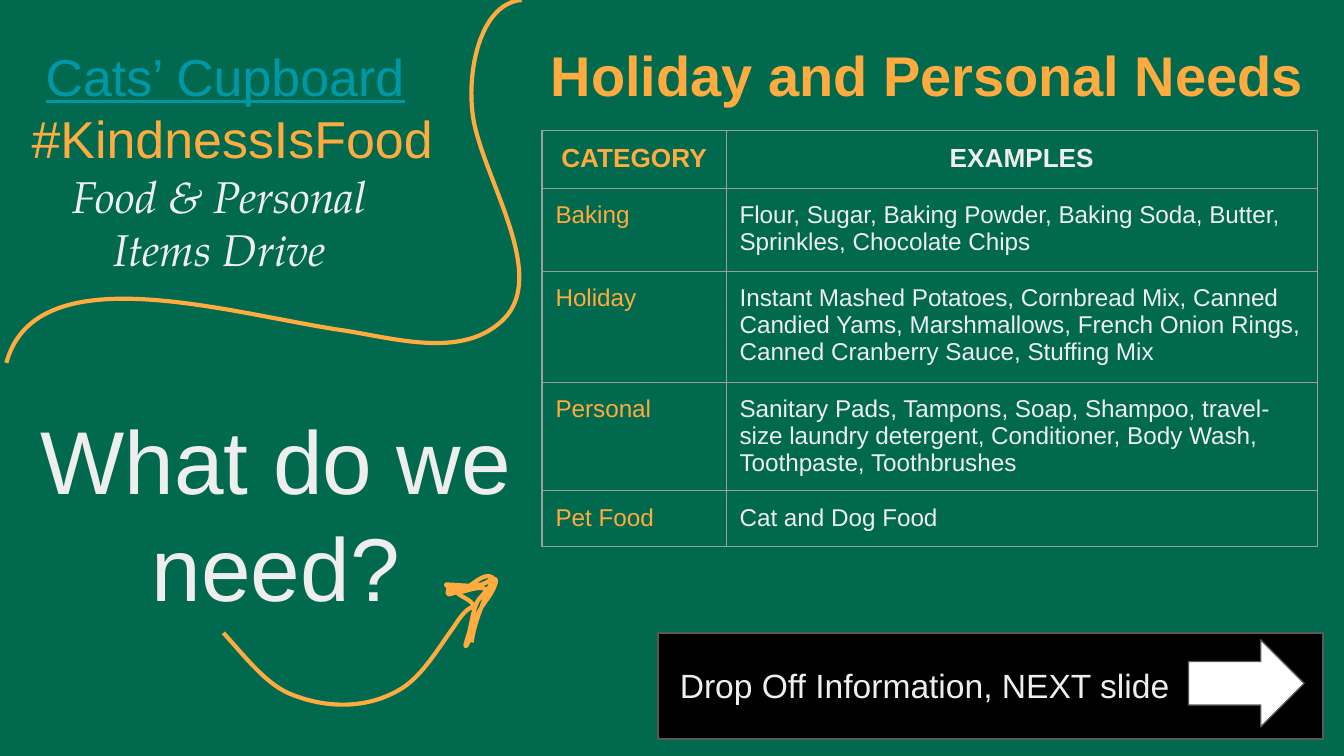
from typing import NamedTuple

import pptx
import pptx.util
import pptx.dml.color
import pptx.enum.shapes
import pptx.enum.text
import pptx.oxml
import pptx.oxml.ns
import lxml.etree

Pt = pptx.util.Pt
RGBColor = pptx.dml.color.RGBColor
Kind = pptx.enum.shapes.MSO_SHAPE
Align = pptx.enum.text.PP_ALIGN
Anchor = pptx.enum.text.MSO_ANCHOR
qn = pptx.oxml.ns.qn

GREEN = RGBColor(0x00, 0x69, 0x4E)
GOLD = RGBColor(0xFF, 0xAB, 0x40)
PALE = RGBColor(0xEE, 0xEE, 0xEE)
TEAL = RGBColor(0x00, 0x97, 0xA7)
BLACK = RGBColor(0, 0, 0)
WHITE = RGBColor(0xFF, 0xFF, 0xFF)
GRAY = RGBColor(0x59, 0x59, 0x59)
RULE = RGBColor(0x9E, 0x9E, 0x9E)
INSET = Pt(7.2)


class Box(NamedTuple):
    left: float
    top: float
    width: float
    height: float


class Line(NamedTuple):
    text: str
    size: float
    color: RGBColor
    font: str = "Arial"
    bold: bool = False
    slant: bool = False
    under: bool = False
    align: Align = Align.CENTER


class Row(NamedTuple):
    height: float
    kind: str
    items: str


class Curve(NamedTuple):
    box: Box
    start: tuple
    bends: list  # each: two control points and an end point


# Content
TITLE = [
    Line("Cats’ Cupboard", 27.8, TEAL, under=True),
    Line(" #KindnessIsFood", 27.8, GOLD),
    Line("Food & Personal ", 23.8, PALE, "TeX Gyre Pagella", slant=True),
    Line("Items Drive ", 23.8, PALE, "TeX Gyre Pagella", slant=True),
]
ASK = [Line("What do we need?", 47.8, PALE)]
HEAD = [Line("Holiday and Personal Needs", 30, GOLD, bold=True, align=Align.LEFT)]
NEXT = [Line("Drop Off Information, NEXT slide", 18, PALE, align=Align.LEFT)]

ROWS = [
    Row(31.1, "CATEGORY", "EXAMPLES"),
    Row(44.5, "Baking", "Flour, Sugar, Baking Powder, Baking Soda, Butter, "
        "Sprinkles, Chocolate Chips"),
    Row(59.5, "Holiday", "Instant Mashed Potatoes, Cornbread Mix, Canned Candied "
        "Yams, Marshmallows, French Onion Rings, Canned Cranberry Sauce, Stuffing Mix"),
    Row(58, "Personal", "Sanitary Pads, Tampons, Soap, Shampoo, travel-size laundry "
        "detergent, Conditioner, Body Wash, Toothpaste, Toothbrushes"),
    Row(30, "Pet Food", "Cat and Dog Food"),
]

SWIRL = Curve(Box(3.4, 0, 276, 194.4), (279.4, 0), [
    (254.9, 2.2, 248.4, 46.1, 254.9, 69.8),
    (263.5, 103.7, 294.5, 151.9, 267.1, 173.5),
    (245.5, 191.5, 211.7, 181.4, 184.3, 177.1),
    (124.6, 168.5, 19.4, 135.4, 3.4, 194.4),
])
ARROW = Curve(Box(119.7, 308.9, 146.1, 69.1), (119.7, 339.1), [
    (131, 351.4, 141.8, 365.8, 154.8, 371.5),
    (173.5, 379.4, 195.1, 380.2, 213.1, 370.1),
    (225.4, 363.6, 234, 348.5, 243.4, 335.5),
    (246.2, 331.2, 249.1, 326.9, 252.7, 325.4),
    (253.4, 325.4, 254.2, 326.9, 254.2, 325.4),
    (252.7, 321.1, 247.7, 320.4, 244.8, 317.5),
    (242.6, 316.8, 238.3, 313.2, 239, 313.2),
    (245.5, 313.2, 251.3, 314.6, 257.8, 313.2),
    (259.9, 313.2, 266.4, 307.4, 265.7, 311.8),
    (264.2, 318.2, 259.2, 322.6, 256.3, 328.3),
    (253.4, 333.4, 252.7, 341.3, 249.8, 346.3),
    (248.4, 347.8, 250.6, 341.3, 251.3, 339.1),
    (252.7, 333.4, 253.4, 327.6, 255.6, 322.6),
    (257, 319.7, 262.1, 316.1, 259.9, 315.4),
    (254.9, 313.9, 249.1, 317.5, 244.1, 317.5),
    (242.6, 317.5, 239.8, 319.7, 239.8, 317.5),
    (239.8, 313.2, 245.5, 316.1, 248.4, 315.4),
    (253.4, 313.9, 259.2, 306, 264.2, 309.6),
    (264.2, 309.6, 263.5, 312, 262.1, 314.6),
    (258.5, 324, 254.2, 333.4, 252.7, 344.2),
])


def write(frame, lines: list[Line]) -> None:
    frame.word_wrap = True
    for i, line in enumerate(lines):
        para = frame.add_paragraph() if i else frame.paragraphs[0]
        para.text = line.text
        para.alignment = line.align
        para.line_spacing = 1.0
        para.space_before = Pt(0)
        font = para.font
        font.name, font.size = line.font, Pt(line.size)
        font.bold, font.italic, font.underline = line.bold, line.slant, line.under
        font.color.rgb = line.color


def place(shape, box: Box) -> None:
    shape.left, shape.top, shape.width, shape.height = map(Pt, box)


def fill_box(shape, box: Box, lines: list[Line], anchor=Anchor.TOP) -> None:
    place(shape, box)
    frame = shape.text_frame
    frame.auto_size = pptx.enum.text.MSO_AUTO_SIZE.NONE
    frame.vertical_anchor = anchor
    frame.margin_left = frame.margin_right = INSET
    frame.margin_top = frame.margin_bottom = INSET
    write(frame, lines)


def add_text(slide, box: Box, lines: list[Line]) -> None:
    fill_box(slide.shapes.add_textbox(*map(Pt, box)), box, lines)


def add_curve(slide, curve: Curve) -> None:
    box = curve.box
    pen = slide.shapes.build_freeform(*map(Pt, curve.start))
    ends = [(Pt(bend[4]), Pt(bend[5])) for bend in curve.bends]
    pen.add_line_segments(ends, close=False)
    shape = pen.convert_to_shape()
    place(shape, box)
    shape.shadow.inherit = False
    shape.fill.background()
    shape.line.color.rgb, shape.line.width = GOLD, Pt(2.25)

    # Turn the straight segments into Bezier curves, measured from the box
    track = next(shape._element.iter(qn("a:path")))
    track.set("w", str(Pt(box.width)))
    track.set("h", str(Pt(box.height)))
    move, *legs = track
    spots = [(move, curve.start)]
    for leg, bend in zip(legs, curve.bends):
        turn = lxml.etree.SubElement(track, qn("a:cubicBezTo"))
        track.replace(leg, turn)
        spots.append((turn, bend))
    for node, nums in spots:
        for old in list(node):
            node.remove(old)
        for x, y in zip(nums[::2], nums[1::2]):
            lxml.etree.SubElement(node, qn("a:pt"), x=str(Pt(x - box.left)),
                                  y=str(Pt(y - box.top)))


def add_block(slide, kind: Kind, box: Box, color: RGBColor) -> None:
    shape = slide.shapes.add_shape(kind, *map(Pt, box))
    shape.shadow.inherit = False
    shape.fill.solid()
    shape.fill.fore_color.rgb = color
    shape.line.color.rgb, shape.line.width = GRAY, Pt(0.75)


def add_rules(cell) -> None:
    props = cell._tc.get_or_add_tcPr()
    for i, side in enumerate(("lnL", "lnR", "lnT", "lnB")):
        props.insert(i, pptx.oxml.parse_xml(
            f'<a:{side} {pptx.oxml.ns.nsdecls("a")} w="{Pt(0.75)}"><a:solidFill>'
            f'<a:srgbClr val="{RULE}"/></a:solidFill></a:{side}>'))


def add_needs(slide, left: float, top: float, cols: tuple) -> None:
    box = Box(left, top, sum(cols), sum(row.height for row in ROWS))
    table = slide.shapes.add_table(len(ROWS), len(cols), *map(Pt, box)).table
    table.first_row = table.horz_banding = False
    for col, width in zip(table.columns, cols):
        col.width = Pt(width)
    for r, row in enumerate(ROWS):
        table.rows[r].height = Pt(row.height)
        head = r == 0
        for c, (text, color) in enumerate(((row.kind, GOLD), (row.items, PALE))):
            cell = table.cell(r, c)
            cell.margin_left = cell.margin_right = INSET
            cell.margin_top = cell.margin_bottom = INSET
            cell.fill.background()
            add_rules(cell)
            write(cell.text_frame, [Line(text, 14 if head else 13, color, bold=head,
                                         align=Align.CENTER if head else Align.LEFT)])


def main() -> None:
    deck = pptx.Presentation()
    deck.slide_width, deck.slide_height = Pt(720), Pt(405)
    slide = deck.slides.add_slide(deck.slide_layouts[0])
    slide.background.fill.solid()
    slide.background.fill.fore_color.rgb = GREEN

    # Left side: title, question and hand-drawn lines
    fill_box(slide.shapes.title, Box(-17.3, -2.9, 275.8, 157.7), TITLE, Anchor.BOTTOM)
    fill_box(slide.placeholders[1], Box(-10, 220.3, 315.4, 118.8), ASK, Anchor.BOTTOM)
    for curve in (SWIRL, ARROW):
        add_curve(slide, curve)

    # Right side: heading and table
    add_text(slide, Box(288, 14.4, 432, 55.4), HEAD)
    add_needs(slide, 290.4, 69.8, (98.6, 316.8))

    # Pointer to the next slide
    add_block(slide, Kind.RECTANGLE, Box(352.4, 339.1, 356.4, 56.9), BLACK)
    add_block(slide, Kind.RIGHT_ARROW, Box(636.7, 342.8, 62, 46.6), WHITE)
    add_text(slide, Box(357.1, 349.2, 290.9, 40.3), NEXT)
    deck.save("out.pptx")


if __name__ == "__main__":
    main()
